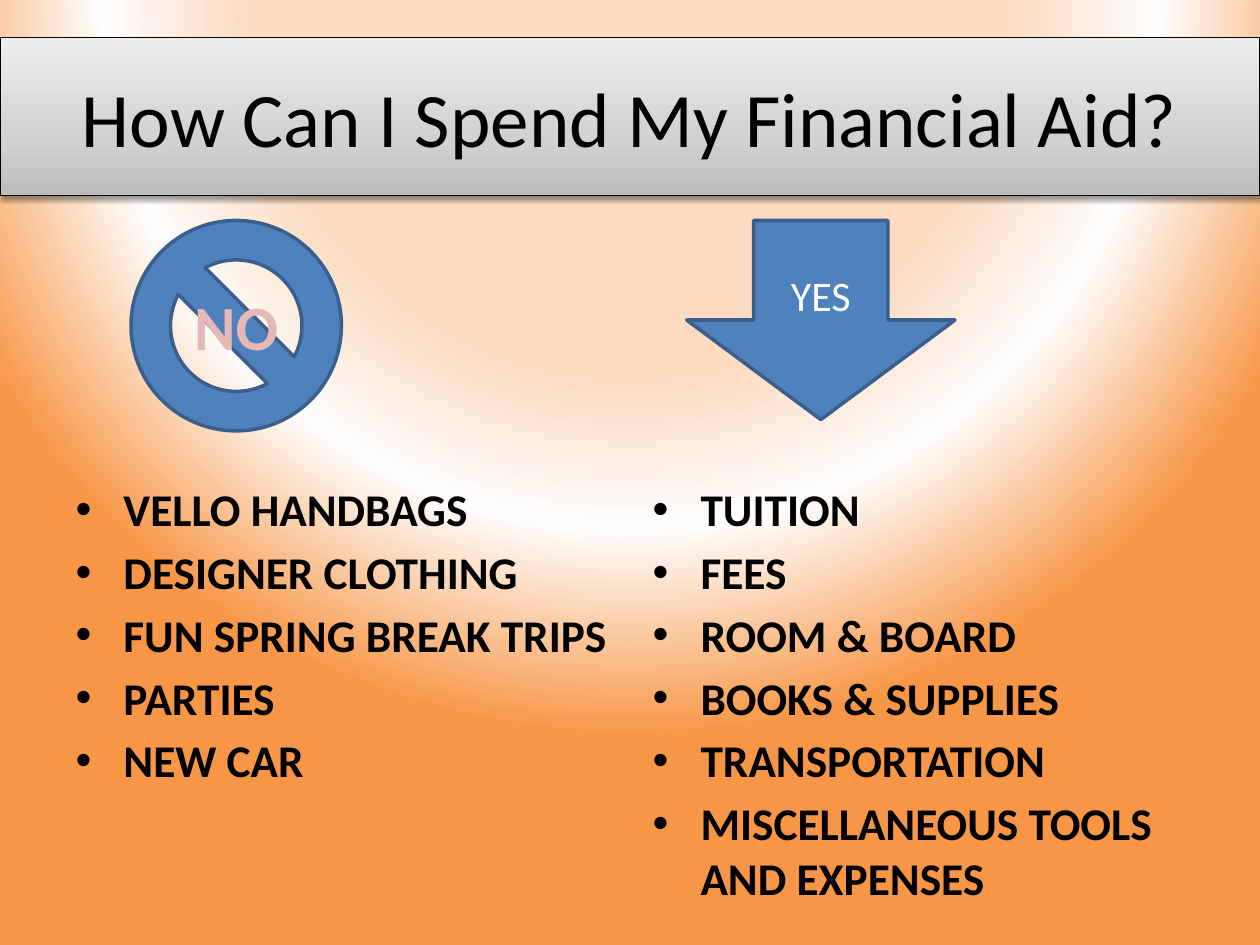
from pptx import Presentation
from pptx.dml.color import RGBColor
from pptx.enum.shapes import MSO_SHAPE
from pptx.enum.text import MSO_ANCHOR, MSO_AUTO_SIZE, PP_ALIGN
from pptx.oxml import parse_xml
from pptx.oxml.ns import nsdecls, qn
from pptx.util import Inches, Pt

HUES = {
    "ink": "000000", "white": "FFFFFF", "pink": "E6B9B8",
    "blue": "4F81BD", "navy": "3A5F8C",
    "peach": "FCDBC0", "glow": "FEFEFE", "orange": "F79646",
    "dark": "BDBDBD", "mid": "D1D1D1", "light": "EEEEEE",
}
BANNED = ["VELLO HANDBAGS", "DESIGNER CLOTHING", "FUN SPRING BREAK TRIPS",
          "PARTIES", "NEW CAR"]
ALLOWED = ["TUITION", "FEES", "ROOM & BOARD", "BOOKS & SUPPLIES",
           "TRANSPORTATION", "MISCELLANEOUS TOOLS AND EXPENSES"]


def color(name):
    """Return the named colour."""
    return RGBColor.from_string(HUES[name])


def place(shape, box):
    """Move a shape into a box given in inches."""
    shape.left, shape.top, shape.width, shape.height = map(Inches, box)


def write(para, text, size=25.9, hue="ink", bold=False, align=PP_ALIGN.CENTER):
    """Write one formatted run into a paragraph."""
    run = para.add_run()
    run.text = text
    font = run.font
    font.name, font.size, font.bold = "Calibri", Pt(size), bold
    font.color.rgb = color(hue)
    para.alignment = align


def blend(fill, props, stops, shade):
    """Give a fill's parent element a gradient with the given shading."""
    fill.solid()
    marks = "".join(
        f'<a:gs pos="{pos * 1000}"><a:srgbClr val="{HUES[hue]}"/></a:gs>'
        for pos, hue in stops)
    grad = parse_xml(f'<a:gradFill {nsdecls("a")} rotWithShape="1">'
                     f'<a:gsLst>{marks}</a:gsLst>{shade}</a:gradFill>')
    props.replace(props.find(qn("a:solidFill")), grad)


def backdrop(slide):
    """Paint the glowing ring behind the slide."""
    fill = slide.background.fill
    fill.solid()
    props = next(slide.element.iter(qn("p:bgPr")))
    blend(fill, props, [(48, "peach"), (67, "glow"), (94, "orange")],
          '<a:path path="circle"><a:fillToRect l="50000" t="-80000" '
          'r="50000" b="180000"/></a:path>')


def banner(shape, box, text):
    """Style the title as a shaded silver band."""
    place(shape, box)
    props = shape.element.spPr
    blend(shape.fill, props, [(0, "dark"), (35, "mid"), (100, "light")],
          '<a:lin ang="16200000" scaled="1"/>')
    shape.line.color.rgb = color("ink")
    shape.line.width = Pt(0.75)
    props.append(parse_xml(
        f'<a:effectLst {nsdecls("a")}><a:outerShdw blurRad="{Pt(3.1)}" '
        f'dist="{Pt(1.6)}" dir="5400000" rotWithShape="0">'
        f'<a:srgbClr val="{HUES["ink"]}"><a:alpha val="38000"/></a:srgbClr>'
        '</a:outerShdw></a:effectLst>'))
    frame = shape.text_frame
    frame.vertical_anchor = MSO_ANCHOR.MIDDLE
    write(frame.paragraphs[0], text, size=44)


def column(shape, box, items):
    """Fill a body placeholder with bullets that start below its sign."""
    place(shape, box)
    frame = shape.text_frame
    frame.auto_size = MSO_AUTO_SIZE.NONE
    frame.word_wrap = True
    frame.margin_top = Inches(2.07)
    for num, item in enumerate(items):
        para = frame.add_paragraph() if num else frame.paragraphs[0]
        write(para, item, bold=True, align=PP_ALIGN.LEFT)
        para.space_before = Pt(4.8)
        props = para._p.get_or_add_pPr()
        props.set("marL", str(Inches(0.38)))
        props.set("indent", str(Inches(-0.38)))
        props.append(parse_xml(f'<a:buChar {nsdecls("a")} char="•"/>'))


def sign(slide, kind, box, text, **style):
    """Add a blue symbol with a centred word."""
    shape = slide.shapes.add_shape(kind, *map(Inches, box))
    shape.shadow.inherit = False
    shape.fill.solid()
    shape.fill.fore_color.rgb = color("blue")
    shape.line.color.rgb = color("navy")
    shape.line.width = Pt(2)
    frame = shape.text_frame
    frame.vertical_anchor = MSO_ANCHOR.MIDDLE
    write(frame.paragraphs[0], text, **style)


def main():
    """Build and save the slide."""
    deck = Presentation()
    deck.slide_width, deck.slide_height = Inches(10), Inches(7.5)
    slide = deck.slides.add_slide(deck.slide_layouts[3])
    title, left, right = list(slide.placeholders)[:3]
    backdrop(slide)
    banner(title, (0, 0.3, 10, 1.25), "How Can I Spend My Financial Aid?")
    column(left, (0.5, 1.75, 4.42, 4.95), BANNED)
    column(right, (5.08, 1.75, 4.42, 5.17), ALLOWED)
    sign(slide, MSO_SHAPE.NO_SYMBOL, (1.04, 1.75, 1.67, 1.67), "NO",
         size=36, hue="pink", bold=True)
    sign(slide, MSO_SHAPE.DOWN_ARROW, (5.45, 1.75, 2.13, 1.58), "YES",
         size=24, hue="white")
    deck.save("out.pptx")


if __name__ == "__main__":
    main()
